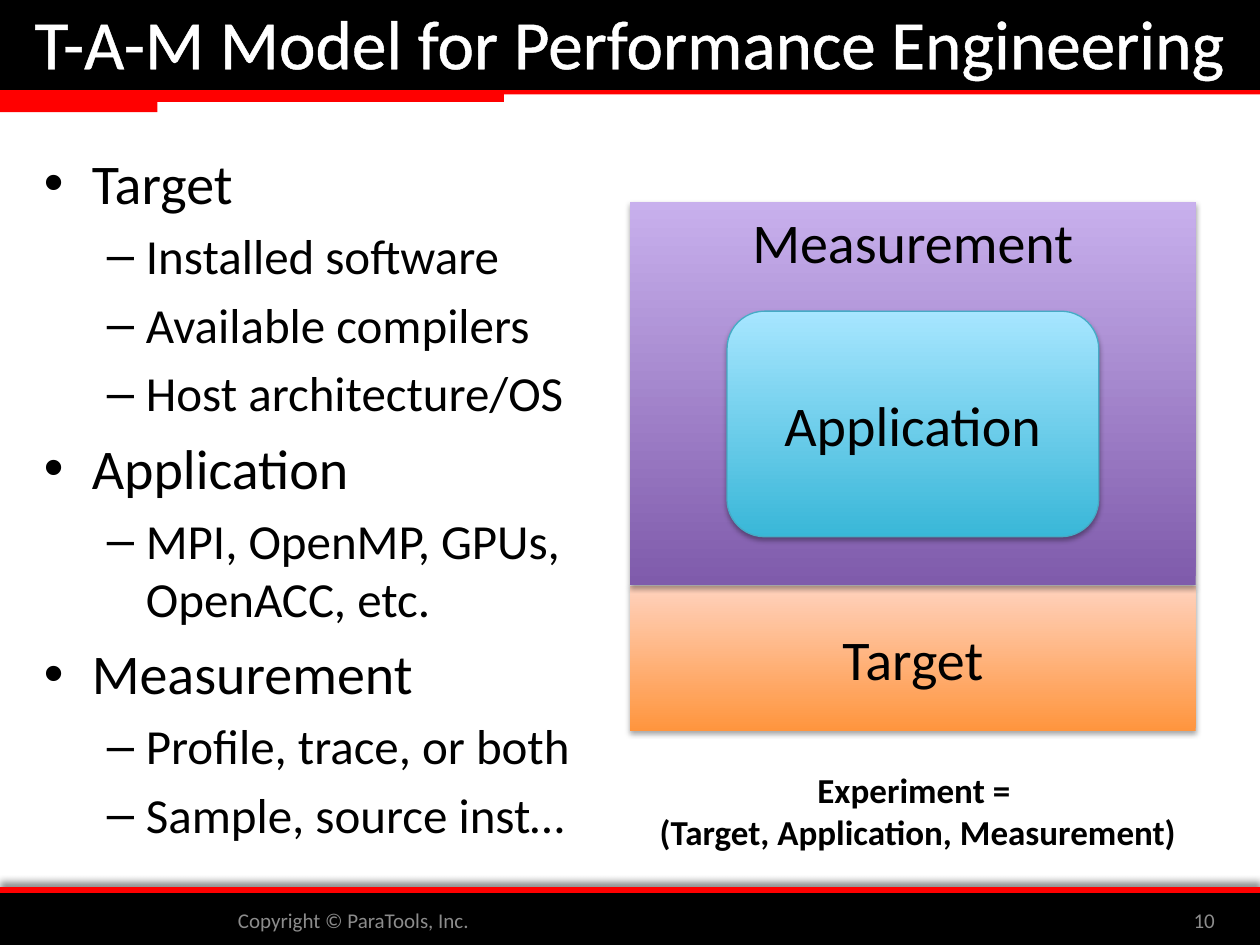
from dataclasses import dataclass

from lxml.etree import SubElement as Sub
from pptx import Presentation
from pptx.dml.color import RGBColor as RGB
from pptx.enum.shapes import MSO_SHAPE as Kind
from pptx.enum.text import MSO_ANCHOR as Anchor, PP_ALIGN as Align
from pptx.oxml.ns import qn
from pptx.util import Inches, Pt

WIDE, HIGH = Inches(10), Inches(7.5)


@dataclass(frozen=True)
class Theme:
    font: str = "Calibri"
    black: str = "000000"
    white: str = "FFFFFF"
    red: str = "FF0000"
    gray: str = "8C8C8C"
    edge: str = "46AAC5"
    orange: tuple = ("FF953E", "FFD2BD")
    purple: tuple = ("7F5BAB", "C8B0ED")
    blue: tuple = ("39B7D8", "A7E6FF")
    title: float = 39.6
    head: float = 32
    item: float = 28
    note: float = 20
    foot: float = 12


T = Theme()
LEVELS = {  # level: size, bullet, left indent, hanging indent
    0: (T.head, "•", 0.38, 0.38),
    1: (T.item, "–", 0.81, 0.31),
}
TOPICS = {
    "Target": ["Installed software", "Available compilers", "Host architecture/OS"],
    "Application": ["MPI, OpenMP, GPUs, OpenACC, etc."],
    "Measurement": ["Profile, trace, or both", "Sample, source inst…"],
}


def area(x, y, w, h):
    """Turn percentages of the slide's size into lengths."""
    return [round(side * part / 100)
            for side, part in zip((WIDE, HIGH, WIDE, HIGH), (x, y, w, h))]


def style(font, size, color=T.black, **more):
    for name, value in {"name": T.font, "size": Pt(size), **more}.items():
        setattr(font, name, value)
    font.color.rgb = RGB.from_string(color)


def write(shape, text, size, color=T.black, align=Align.CENTER,
          anchor=Anchor.MIDDLE, **more):
    frame = shape.text_frame
    frame.word_wrap, frame.vertical_anchor = True, anchor
    para = frame.paragraphs[0]
    para.text, para.alignment = text, align
    for run in para.runs:
        style(run.font, size, color, **more)


def label(slide, spot, *args, **more):
    write(slide.shapes.add_textbox(*area(*spot)), *args, **more)


def shade(shape, alpha, blur, dist, angle):
    """Cast an outer shadow; blur and distance are in points."""
    cast = Sub(Sub(shape._element.spPr, qn("a:effectLst")), qn("a:outerShdw"),
               blurRad=str(Pt(blur)), dist=str(Pt(dist)),
               dir=str(angle * 60000), rotWithShape="0")
    tint = Sub(cast, qn("a:srgbClr"), val=T.black)
    Sub(tint, qn("a:alpha"), val=str(alpha * 1000))


def bar(slide, spot, color, line=None, shadow=None):
    shape = slide.shapes.add_shape(Kind.RECTANGLE, *area(*spot))
    shape.fill.solid()
    shape.fill.fore_color.rgb = RGB.from_string(color)
    outline(shape, line, 2)
    if shadow:
        shade(shape, *shadow)
    else:
        shape.shadow.inherit = False


def outline(shape, color, width):
    if color:
        shape.line.color.rgb = RGB.from_string(color)
        shape.line.width = Pt(width)
    else:
        shape.line.fill.background()


def block(slide, spot, text, colors, kind=Kind.RECTANGLE, line=None,
          anchor=Anchor.MIDDLE):
    """Draw a labelled box, shaded from the first colour at its foot upward."""
    shape = slide.shapes.add_shape(kind, *area(*spot))
    shape.fill.gradient()
    shape.fill.gradient_angle = 90
    for stop, color in zip(shape.fill.gradient_stops, colors):
        stop.color.rgb = RGB.from_string(color)
    outline(shape, line, 0.75)
    shade(shape, 35, 3.1, 1.8, 90)
    write(shape, text, T.head, anchor=anchor)


def bullets(slide, spot, topics):
    frame = slide.shapes.add_textbox(*area(*spot)).text_frame
    frame.word_wrap = True
    rows = [(level, text) for head, items in topics.items()
            for level, text in [(0, head), *((1, item) for item in items)]]
    for i, (level, text) in enumerate(rows):
        size, mark, left, hang = LEVELS[level]
        para = frame.add_paragraph() if i else frame.paragraphs[0]
        para.text, para.level = text, level
        para.space_before = Pt(size * 0.2 if i else 0)
        props = para._p.get_or_add_pPr()
        props.set("marL", str(Inches(left)))
        props.set("indent", str(-Inches(hang)))
        Sub(props, qn("a:buFont"), typeface="Arial")
        Sub(props, qn("a:buChar"), char=mark)
        style(para.runs[0].font, size)


def heading(slide, spot, text):
    shape = slide.shapes.title
    shape.left, shape.top, shape.width, shape.height = area(*spot)
    write(shape, text, T.title, T.white)
    line = Sub(shape.text_frame.paragraphs[0].runs[0].font._element,
               qn("a:ln"), w=str(Pt(1.45)))
    Sub(Sub(line, qn("a:solidFill")), qn("a:srgbClr"), val=T.white)
    line.getparent().insert(0, line)
    slide.shapes._spTree.append(shape._element)  # in front of the bars


def frame(slide):
    """Draw the bands at the head and foot of the slide."""
    bar(slide, (0, 93.87, 100, 1.47), T.red, shadow=(43, 4, 3, 270))
    bar(slide, (0, 94.67, 100, 5.33), T.black, T.black)
    for y, w, h in [(8.53, 100, 1.47), (7.47, 12.5, 4.4), (7.87, 40, 2.93)]:
        bar(slide, (0, y, w, h), T.red)
    bar(slide, (0, 0, 100, 9.33), T.black, T.black)


def main():
    deck = Presentation()
    deck.slide_width, deck.slide_height = WIDE, HIGH
    slide = deck.slides.add_slide(deck.slide_layouts[5])
    frame(slide)
    heading(slide, (0, -0.27, 100, 9.33), "T-A-M Model for Performance Engineering")
    bullets(slide, (2.5, 15.07, 45.8, 77.33), TOPICS)
    label(slide, (17.9, 94.67, 67.5, 5.33), "Copyright © ParaTools, Inc.",
          T.foot, T.gray, Align.LEFT)
    label(slide, (87.5, 94.67, 9.9, 5.33), "10", T.foot, T.gray, Align.RIGHT)
    block(slide, (50, 62, 44.9, 15.33), "Target", T.orange)
    block(slide, (50, 21.33, 44.9, 40.53), "Measurement", T.purple,
          anchor=Anchor.TOP)
    block(slide, (57.7, 32.93, 29.5, 23.87), "Application", T.blue,
          Kind.ROUNDED_RECTANGLE, T.edge)
    label(slide, (48.3, 80.67, 49.1, 10.27),
          "Experiment = \v(Target, Application, Measurement)", T.note,
          anchor=Anchor.TOP, bold=True)
    deck.save("out.pptx")


if __name__ == "__main__":
    main()
